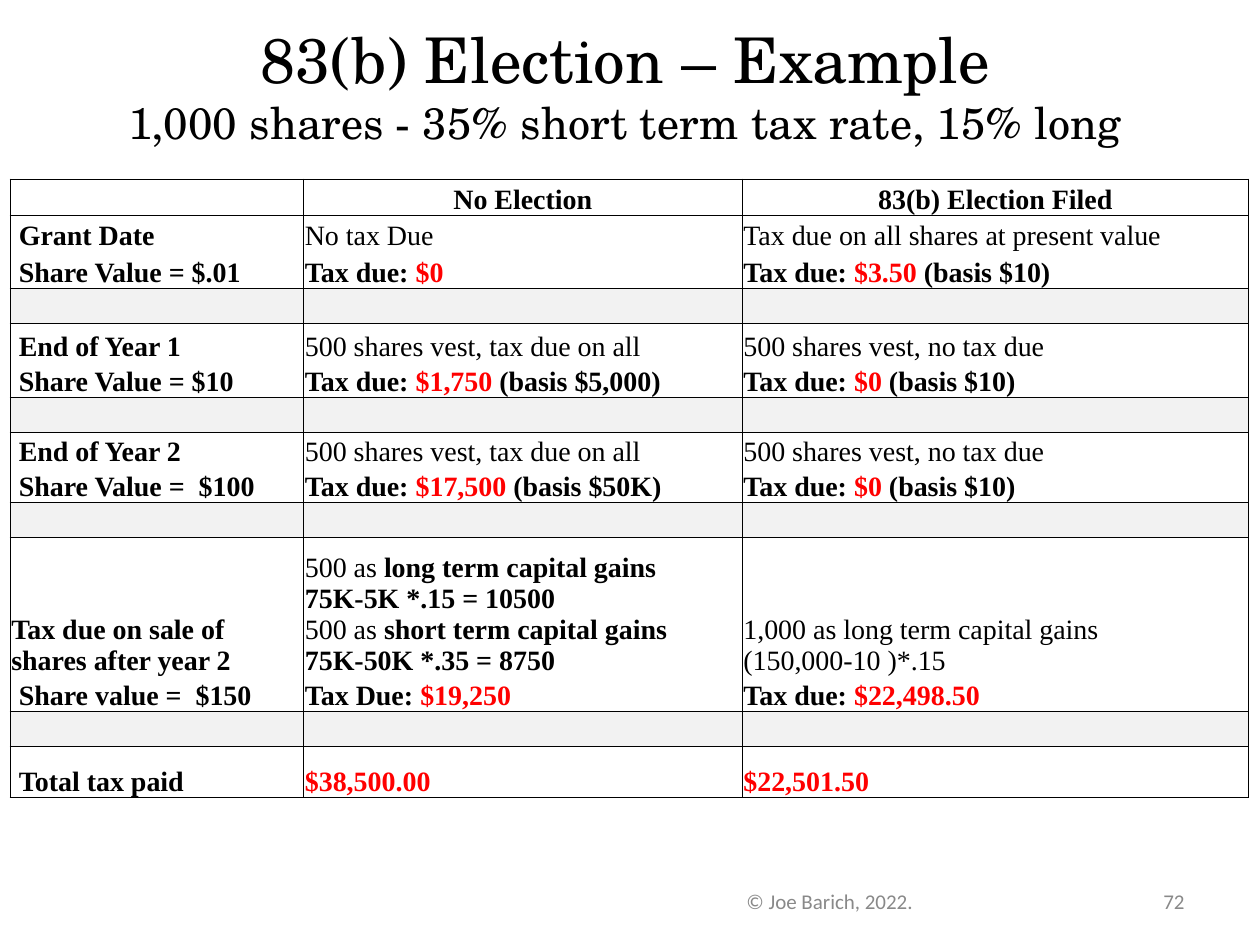
from lxml.etree import SubElement
from pptx import Presentation
from pptx.dml.color import RGBColor
from pptx.enum.text import MSO_ANCHOR as Anchor, MSO_AUTO_SIZE as AutoSize, PP_ALIGN as Align
from pptx.oxml.ns import qn
from pptx.util import Inches, Pt

BLACK = RGBColor(0x00, 0x00, 0x00)
RED = RGBColor(0xFF, 0x00, 0x00)
WHITE = RGBColor(0xFF, 0xFF, 0xFF)
BAND = RGBColor(0xF2, 0xF2, 0xF2)
GRAY = RGBColor(0x89, 0x89, 0x89)
TITLE_FONT, TABLE_FONT, FOOTER_FONT = "TeX Gyre Schola", "Times New Roman", "Calibri"
TABLE_SIZE = Pt(16)
THIN, THICK = Pt(0.5), Pt(1)
COLUMN_WIDTHS = [2.33, 3.48, 4.02]
ROW_HEIGHTS = [0.29, 0.29, 0.29, 0.26, 0.31, 0.25, 0.26, 0.28, 0.26, 0.26, 1.11, 0.26, 0.25, 0.4]
OPEN_BELOW = {1, 4, 7, 10}
THICK_BELOW = {8}
INDENTED_LABELS = {1, 2, 4, 5, 7, 8, 11, 13}


def plain(text):
    return text, False, BLACK


def strong(text):
    return text, True, BLACK


def amount(text):
    return text, True, RED


def tax_due(value, basis="", label="Tax due: "):
    runs = [strong(label), amount(value)]
    return [runs + [strong(f" (basis {basis})")] if basis else runs]


def line(run):
    return [[run]]


SPACER = [[], [], []]
ROWS = [
    [[], line(strong("No Election")), line(strong("83(b) Election Filed"))],
    [line(strong("Grant Date")), line(plain("No tax Due")),
     line(plain("Tax due on all shares at present value"))],
    [line(strong("Share Value = $.01")), tax_due("$0"), tax_due("$3.50", "$10")],
    SPACER,
    [line(strong("End of Year 1")), line(plain("500 shares vest, tax due on all")),
     line(plain("500 shares vest, no tax due"))],
    [line(strong("Share Value = $10")), tax_due("$1,750", "$5,000"), tax_due("$0", "$10")],
    SPACER,
    [line(strong("End of Year 2")), line(plain("500 shares vest, tax due on all")),
     line(plain("500 shares vest, no tax due"))],
    [line(strong("Share Value =  $100")), tax_due("$17,500", "$50K"), tax_due("$0", "$10")],
    SPACER,
    [line(strong("Tax due on sale of shares after year 2")),
     [[plain("500 as "), strong("long term capital gains")],
      [strong("75K-5K *.15 = 10500")],
      [plain("500 as "), strong("short term capital gains")],
      [strong("75K-50K *.35 = 8750")]],
     [[plain("1,000 as long term capital gains")], [plain("(150,000-10 )*.15")]]],
    [line(strong("Share value =  $150")), tax_due("$19,250", label="Tax Due: "),
     tax_due("$22,498.50")],
    SPACER,
    [line(strong("Total tax paid")), line(amount("$38,500.00")), line(amount("$22,501.50"))],
]


def add_title(slide, heading, subheading):
    title = slide.shapes.title
    title.left, title.top, title.width, title.height = map(Inches, (0.42, 0.17, 9.08, 1))
    frame = title.text_frame
    frame.auto_size = AutoSize.NONE
    frame.vertical_anchor = Anchor.MIDDLE
    paragraph = frame.paragraphs[0]
    paragraph.alignment = Align.CENTER
    paragraph.font.name = TITLE_FONT
    paragraph.font.color.rgb = BLACK
    first = paragraph.add_run()
    first.text, first.font.size = heading, Pt(36)
    paragraph.add_line_break()
    second = paragraph.add_run()
    second.text, second.font.size = subheading, Pt(25.2)


def add_footer(slide, text, left, width, alignment):
    box = slide.shapes.add_textbox(Inches(left), Inches(6.95), Inches(width), Inches(0.4))
    frame = box.text_frame
    frame.word_wrap = True
    frame.vertical_anchor = Anchor.MIDDLE
    paragraph = frame.paragraphs[0]
    paragraph.text = text
    paragraph.alignment = alignment
    paragraph.font.name = FOOTER_FONT
    paragraph.font.size = Pt(12)
    paragraph.font.color.rgb = GRAY


def add_border(cell, side, width):
    border = SubElement(cell._tc.get_or_add_tcPr(), qn(f"a:ln{side}"), w=str(width))
    if width:
        fill = SubElement(border, qn("a:solidFill"))
        SubElement(fill, qn("a:srgbClr"), val=str(BLACK))
    else:
        SubElement(border, qn("a:noFill"))


def width_below(row):
    if row in OPEN_BELOW:
        return 0
    return THICK if row in THICK_BELOW else THIN


def write_cell(cell, paragraphs, alignment):
    frame = cell.text_frame
    if not paragraphs:
        SubElement(frame.paragraphs[0]._p, qn("a:endParaRPr"), sz=str(int(TABLE_SIZE.pt * 100)))
    for index, runs in enumerate(paragraphs):
        paragraph = frame.add_paragraph() if index else frame.paragraphs[0]
        paragraph.alignment = alignment
        paragraph.font.name = TABLE_FONT
        paragraph.font.size = TABLE_SIZE
        for text, bold, color in runs:
            run = paragraph.add_run()
            run.text = text
            run.font.bold = bold
            run.font.color.rgb = color


def format_cell(cell, row, column):
    cell.vertical_anchor = Anchor.BOTTOM
    indented = column == 0 and row in INDENTED_LABELS
    cell.margin_left = Inches(0.07 if indented else 0.01)
    cell.margin_right = cell.margin_top = Inches(0.01)
    cell.margin_bottom = 0
    for side, width in zip("LRTB", (THIN, THIN, width_below(row - 1), width_below(row))):
        add_border(cell, side, width)
    cell.fill.solid()
    cell.fill.fore_color.rgb = BAND if ROWS[row] is SPACER else WHITE


def add_tax_table(slide):
    frame = slide.shapes.add_table(
        len(ROWS), len(COLUMN_WIDTHS), Inches(0.08), Inches(1.42),
        Inches(sum(COLUMN_WIDTHS)), Inches(sum(ROW_HEIGHTS)))
    table = frame.table
    for column, width in zip(table.columns, COLUMN_WIDTHS):
        column.width = Inches(width)
    for row, height in zip(table.rows, ROW_HEIGHTS):
        row.height = Inches(height)
    for row, contents in enumerate(ROWS):
        for column, paragraphs in enumerate(contents):
            cell = table.cell(row, column)
            format_cell(cell, row, column)
            write_cell(cell, paragraphs, Align.LEFT if row else Align.CENTER)


def main():
    presentation = Presentation()
    presentation.slide_width, presentation.slide_height = Inches(10), Inches(7.5)
    slide = presentation.slides.add_slide(presentation.slide_layouts[5])
    add_title(slide, "83(b) Election – Example",
              "1,000 shares - 35% short term tax rate, 15% long")
    add_footer(slide, "72", 8.33, 1.17, Align.RIGHT)
    add_tax_table(slide)
    add_footer(slide, "© Joe Barich, 2022.", 5, 3.17, Align.CENTER)
    presentation.save("out.pptx")


if __name__ == "__main__":
    main()
